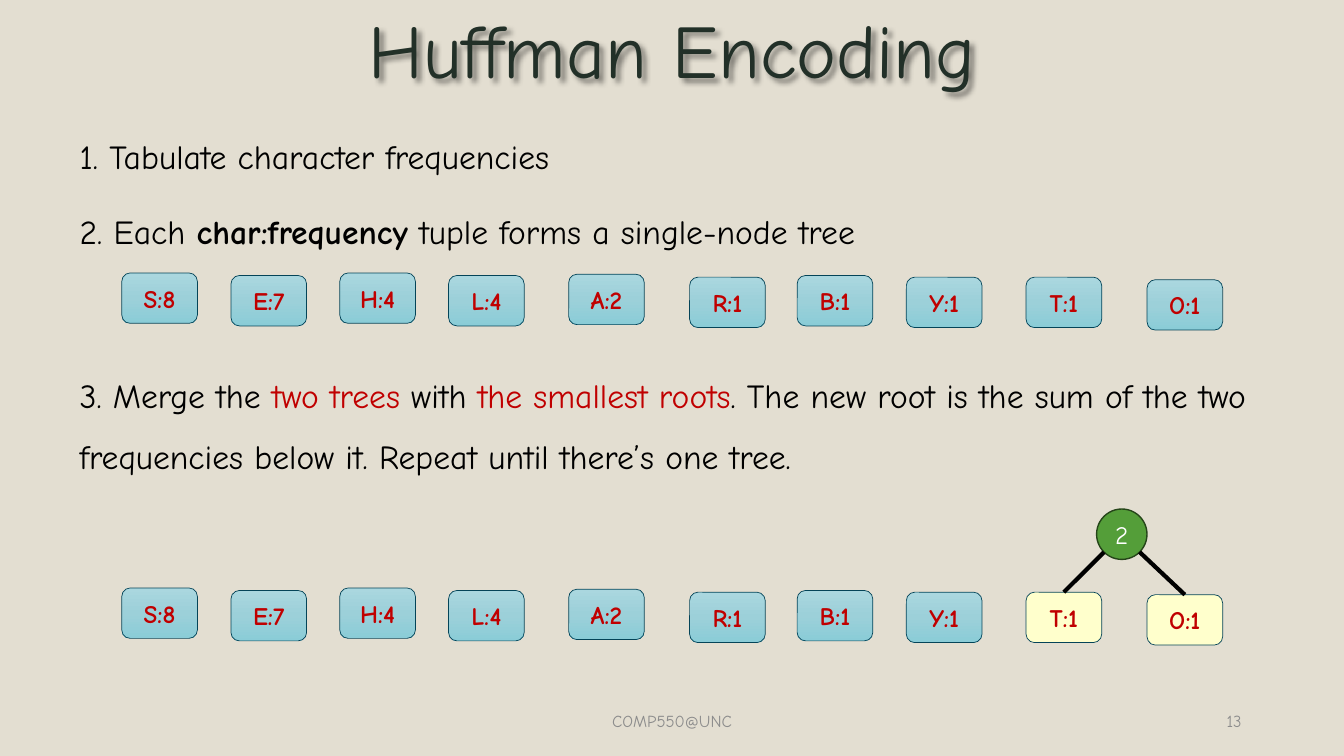
from copy import deepcopy
from dataclasses import dataclass
from math import sqrt

from lxml.etree import SubElement
from pptx import Presentation
from pptx.dml.color import RGBColor
from pptx.enum.shapes import MSO_CONNECTOR, MSO_SHAPE
from pptx.enum.text import MSO_ANCHOR, PP_ALIGN
from pptx.oxml.ns import qn
from pptx.shapes.autoshape import Shape
from pptx.slide import Slide
from pptx.util import Inches, Length, Pt

FONT = "Comic Neue"
WIDTH, HEIGHT = Inches(13.33), Inches(7.5)
COLUMNS, ROWS = 32, 18
COLORS = {
    "background": "E3DED1",
    "title": "223028",
    "text": "000000",
    "accent": "C00000",
    "footer": "8C8C8C",
    "leaf_line": "044458",
    "merged_leaf": "FFFFCC",
    "root": "549E39",
    "root_line": "254519",
    "root_text": "FFFFFF",
}
LEAF_GRADIENT = ((0, "AAD7DF"), (0.5, "9CD0D9"), (1, "8ACCD7"))
LEAF_WIDTH, LEAF_HEIGHT = 1.8, 1.2
ROOT_LEFT, ROOT_TOP, ROOT_SIZE = 26.11, 12.12, 1.2


@dataclass(frozen=True)
class Span:
    text: str
    color: str = "text"
    bold: bool = False


@dataclass(frozen=True)
class TextBlock:
    left: float
    top: float
    width: float
    height: float
    paragraphs: tuple[tuple[Span, ...], ...]
    size: int
    align: PP_ALIGN = PP_ALIGN.LEFT
    anchor: MSO_ANCHOR = MSO_ANCHOR.MIDDLE
    line_spacing: float = 1
    space_before: int = 0


@dataclass(frozen=True)
class Leaf:
    label: str
    left: float
    drop: float


@dataclass(frozen=True)
class Forest:
    top: float
    merged: tuple[str, ...] = ()


TITLE = TextBlock(2.2, 0.07, 27.6, 2.45, ((Span("Huffman Encoding", "title"),),),
                  54, PP_ALIGN.CENTER, line_spacing=0.9)
FIRST_STEPS = TextBlock(
    1.66, 2.64, 28.68, 3.74,
    (
        (Span("1. Tabulate character frequencies"),),
        (Span("2. Each "), Span("char:frequency", bold=True),
         Span(" tuple forms a single-node tree")),
    ),
    24, anchor=MSO_ANCHOR.TOP, line_spacing=1.5, space_before=10)
MERGE_STEP = TextBlock(
    1.66, 8.33, 28.68, 3.29,
    ((
        Span("3. Merge the "), Span("two trees ", "accent"), Span("with "),
        Span("the smallest roots", "accent"),
        Span(". The new root is the sum of the two frequencies below it. "
             "Repeat until there’s one tree."),
    ),),
    24, anchor=MSO_ANCHOR.TOP, line_spacing=1.5, space_before=10)
FOOTER = TextBlock(10.6, 16.68, 10.8, 0.96, ((Span("COMP550@UNC", "footer"),),),
                   12, PP_ALIGN.CENTER)
PAGE_NUMBER = TextBlock(22.6, 16.68, 7.2, 0.96, ((Span("13", "footer"),),),
                        12, PP_ALIGN.RIGHT)
LEAVES = (
    Leaf("S:8", 2.9, 0),
    Leaf("E:7", 5.5, 0.06),
    Leaf("H:4", 8.09, 0),
    Leaf("L:4", 10.68, 0.06),
    Leaf("A:2", 13.54, 0.03),
    Leaf("R:1", 16.42, 0.1),
    Leaf("B:1", 18.98, 0.06),
    Leaf("Y:1", 21.58, 0.1),
    Leaf("T:1", 24.43, 0.1),
    Leaf("O:1", 27.31, 0.16),
)
SINGLE_NODES = Forest(6.5)
AFTER_MERGE = Forest(14, ("T:1", "O:1"))


def across(columns: float) -> Length:
    return Length(round(WIDTH * columns / COLUMNS))


def down(rows: float) -> Length:
    return Length(round(HEIGHT * rows / ROWS))


def rgb(name: str) -> RGBColor:
    return RGBColor.from_string(COLORS[name])


def add_text(page: Slide, block: TextBlock) -> Shape:
    box = page.shapes.add_textbox(across(block.left), down(block.top),
                                  across(block.width), down(block.height))
    frame = box.text_frame
    frame.word_wrap = True
    frame.vertical_anchor = block.anchor
    for index, spans in enumerate(block.paragraphs):
        para = frame.add_paragraph() if index else frame.paragraphs[0]
        para.alignment = block.align
        para.line_spacing = block.line_spacing
        para.space_before = Pt(block.space_before)
        para.font.name = FONT
        para.font.size = Pt(block.size)
        para.font.color.rgb = rgb("text")
        for span in spans:
            run = para.add_run()
            run.text = span.text
            if span.color != "text":
                run.font.color.rgb = rgb(span.color)
            if span.bold:
                run.font.bold = True
    return box


def add_text_shadow(box: Shape) -> None:
    effects = SubElement(box._element.spPr, qn("a:effectLst"))
    shadow = SubElement(effects, qn("a:outerShdw"), blurRad="38100",
                        dist="38100", dir="2700000", algn="tl")
    color = SubElement(shadow, qn("a:srgbClr"), val="000000")
    SubElement(color, qn("a:alpha"), val="43000")


def style_node(node: Shape, label: str, text_color: str, line_color: str,
               line_width: float, bold: bool) -> None:
    node.shadow.inherit = False
    node.line.color.rgb = rgb(line_color)
    node.line.width = Pt(line_width)
    node.text_frame.vertical_anchor = MSO_ANCHOR.MIDDLE
    para = node.text_frame.paragraphs[0]
    para.text = label
    para.alignment = PP_ALIGN.CENTER
    para.font.name = FONT
    para.font.size = Pt(18)
    para.font.bold = bold
    para.font.color.rgb = rgb(text_color)


def fill_gradient(node: Shape) -> None:
    node.fill.gradient()
    node.fill.gradient_angle = 270
    stop_list = node._element.spPr.find(".//" + qn("a:gsLst"))
    stop_list.insert(1, deepcopy(stop_list[0]))
    for stop, (position, color) in zip(node.fill.gradient_stops, LEAF_GRADIENT):
        stop.position = position
        stop.color.rgb = RGBColor.from_string(color)


def add_forest(page: Slide, forest: Forest) -> None:
    group = page.shapes.add_group_shape()
    for leaf in LEAVES:
        node = group.shapes.add_shape(
            MSO_SHAPE.ROUNDED_RECTANGLE, across(leaf.left), down(forest.top + leaf.drop),
            across(LEAF_WIDTH), down(LEAF_HEIGHT))
        if leaf.label in forest.merged:
            node.fill.solid()
            node.fill.fore_color.rgb = rgb("merged_leaf")
        else:
            fill_gradient(node)
        style_node(node, leaf.label, "accent", "leaf_line", 0.5, True)


def add_root(page: Slide, forest: Forest) -> None:
    root = page.shapes.add_shape(MSO_SHAPE.OVAL, across(ROOT_LEFT), down(ROOT_TOP),
                                 across(ROOT_SIZE), down(ROOT_SIZE))
    root.fill.solid()
    root.fill.fore_color.rgb = rgb("root")
    style_node(root, "2", "root_text", "root_line", 1, False)
    radius = ROOT_SIZE / 2
    reach = radius / sqrt(2)
    center_x, center_y = ROOT_LEFT + radius, ROOT_TOP + radius
    for leaf in LEAVES:
        if leaf.label not in forest.merged:
            continue
        leaf_x = leaf.left + LEAF_WIDTH / 2
        side = 1 if leaf_x > center_x else -1
        branch = page.shapes.add_connector(
            MSO_CONNECTOR.STRAIGHT, across(center_x + side * reach), down(center_y + reach),
            across(leaf_x), down(forest.top + leaf.drop))
        branch.line.color.rgb = rgb("text")
        branch.line.width = Pt(3)
        SubElement(branch._element.spPr, qn("a:effectLst"))


def main() -> None:
    deck = Presentation()
    deck.slide_width, deck.slide_height = WIDTH, HEIGHT
    page = deck.slides.add_slide(deck.slide_layouts[6])
    page.background.fill.solid()
    page.background.fill.fore_color.rgb = rgb("background")
    add_text_shadow(add_text(page, TITLE))
    for block in (FIRST_STEPS, FOOTER, PAGE_NUMBER):
        add_text(page, block)
    add_forest(page, SINGLE_NODES)
    add_text(page, MERGE_STEP)
    add_forest(page, AFTER_MERGE)
    add_root(page, AFTER_MERGE)
    deck.save("out.pptx")


if __name__ == "__main__":
    main()
